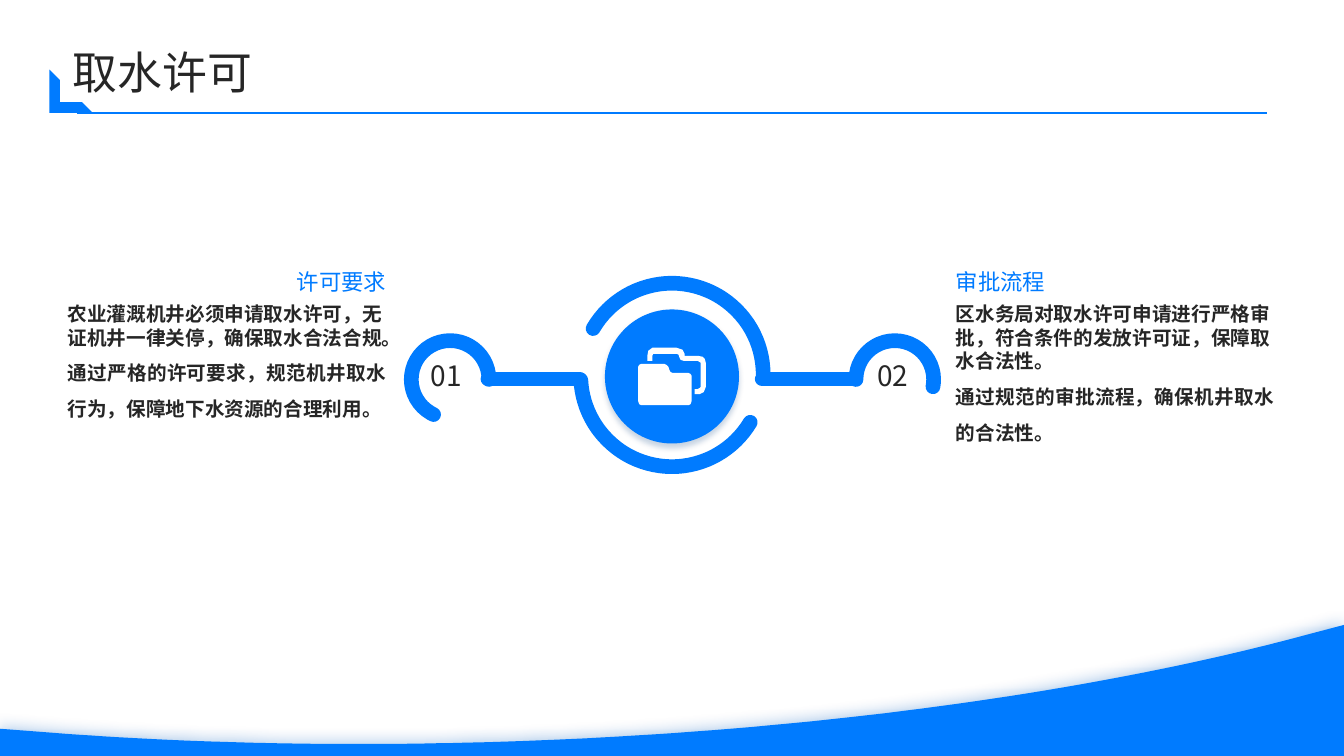
from lxml.etree import SubElement
from pptx import Presentation
from pptx.dml.color import RGBColor
from pptx.enum.shapes import MSO_CONNECTOR as Link, MSO_SHAPE as Kind
from pptx.enum.text import MSO_ANCHOR as Anchor, PP_ALIGN as Align
from pptx.oxml.ns import qn
from pptx.util import Inches, Pt

BLUE, INK, WHITE = "007BFF", "262626", "FFFFFF"


def color(value):
    return RGBColor.from_string(value)


def bezier(start, first, second, end, steps=40):
    """Points along a cubic curve, without its start."""
    points = []
    for step in range(1, steps + 1):
        t = step / steps
        weights = ((1 - t) ** 3, 3 * t * (1 - t) ** 2, 3 * t * t * (1 - t), t ** 3)
        corners = (start, first, second, end)
        points.append(tuple(sum(w * c[axis] for w, c in zip(weights, corners))
                            for axis in (0, 1)))
    return points


class Page:
    font = "Noto Sans CJK SC"
    stroke = 10.5

    def __init__(self, deck):
        self.shapes = deck.slides.add_slide(deck.slide_layouts[6]).shapes

    def outline(self, item, width, cap="rnd"):
        item.line.color.rgb = color(BLUE)
        item.line.width = Pt(width)
        item.element.spPr.find(qn("a:ln")).set("cap", cap)

    def paint(self, shape, fill, shadow=None):
        shape.fill.solid()
        shape.fill.fore_color.rgb = color(fill)
        shape.line.fill.background()
        shape.shadow.inherit = False
        if shadow:
            tint, alpha, blur, distance, angle = shadow
            effects = shape.element.spPr.find(qn("a:effectLst"))
            outer = SubElement(effects, qn("a:outerShdw"), blurRad=str(Pt(blur)),
                               dist=str(Pt(distance)), dir=str(angle * 60000),
                               algn="ctr", rotWithShape="0")
            paint = SubElement(outer, qn("a:srgbClr"), val=tint)
            SubElement(paint, qn("a:alpha"), val=str(alpha * 1000))

    def preset(self, kind, left, top, size, fill, shadow=None):
        shape = self.shapes.add_shape(kind, *map(Inches, (left, top, size, size)))
        self.paint(shape, fill, shadow)
        return shape

    def arc(self, left, top, size, start, end):
        """Clockwise arc between two angles in degrees."""
        shape = self.shapes.add_shape(Kind.ARC, *map(Inches, (left, top, size, size)))
        for index, angle in enumerate((start, end)):
            shape.adjustments[index] = angle * 0.6
        shape.fill.background()
        self.outline(shape, self.stroke)
        shape.shadow.inherit = False

    def line(self, left, right, y, width, cap="rnd"):
        link = self.shapes.add_connector(Link.STRAIGHT, *map(Inches, (left, y, right, y)))
        self.outline(link, width, cap)
        SubElement(link.element.spPr, qn("a:effectLst"))

    def outline_shape(self, points, fill, shadow=None):
        scaled = [(round(x * 1000), round(y * 1000)) for x, y in points]
        builder = self.shapes.build_freeform(*scaled[0], scale=Inches(1) / 1000)
        builder.add_line_segments(scaled[1:], close=True)
        self.paint(builder.convert_to_shape(), fill, shadow)

    def text(self, place, paragraphs, size, ink=INK, bold=False, anchor=Anchor.TOP):
        """Each paragraph is its wording and a dict of paragraph formats."""
        frame = self.shapes.add_textbox(*map(Inches, place)).text_frame
        settings = {"word_wrap": True, "vertical_anchor": anchor}
        settings.update({f"margin_{side}": 0 for side in ("left", "right", "top", "bottom")})
        for name, value in settings.items():
            setattr(frame, name, value)
        for index, (words, formats) in enumerate(paragraphs):
            para = frame.add_paragraph() if index else frame.paragraphs[0]
            for name, value in formats.items():
                setattr(para, name, value)
            span = para.add_run()
            span.text = words
            for name, value in {"size": Pt(size), "bold": bold, "name": self.font}.items():
                setattr(span.font, name, value)
            span.font.color.rgb = color(ink)
            SubElement(span.font._element, qn("a:ea"), typeface=self.font)


def draw_ring(page):
    page.arc(5.76, 2.81, 1.81, 210.2, 359.9)
    page.arc(8.49, 3.38, 0.77, 180, 10.8)
    page.line(7.56, 8.47, 3.76, page.stroke)
    page.arc(4.08, 3.38, 0.77, 115.2, 0)
    page.line(4.84, 5.75, 3.76, page.stroke)
    page.arc(5.76, 2.82, 1.81, 30.9, 177.06)
    page.preset(Kind.OVAL, 6, 3.07, 1.33, BLUE, ("003D80", 22, 4, 3, 90))


def draw_folders(page):
    front = [(6.86, 3.73), (6.85, 3.71), (6.83, 3.7), (6.67, 3.7), (6.65, 3.69),
             (6.64, 3.67), (6.63, 3.64), (6.61, 3.62), (6.59, 3.61), (6.36, 3.61),
             (6.34, 3.62), (6.33, 3.64), (6.33, 3.98), (6.34, 4.01), (6.36, 4.02),
             (6.83, 4.02), (6.85, 4.01), (6.86, 3.98)]
    back = [(7, 3.6), (6.99, 3.56), (6.97, 3.54), (6.92, 3.53), (6.79, 3.53),
            (6.79, 3.51), (6.77, 3.47), (6.71, 3.45), (6.49, 3.45), (6.47, 3.45),
            (6.43, 3.48), (6.42, 3.53), (6.42, 3.58), (6.47, 3.58), (6.47, 3.53),
            (6.48, 3.51), (6.5, 3.51), (6.71, 3.51), (6.73, 3.52), (6.74, 3.55),
            (6.75, 3.57), (6.78, 3.58), (6.92, 3.58), (6.95, 3.6), (6.95, 3.84),
            (6.94, 3.85), (6.92, 3.86), (6.89, 3.86), (6.89, 3.91), (6.92, 3.91),
            (6.94, 3.91), (6.98, 3.89), (7, 3.84)]
    for folder in (front, back):
        page.outline_shape(folder, WHITE)


def draw_step(page, number, number_left, left, align, heading, rule, result):
    page.text((number_left, 3.21, 0.64, 0.68), [(number, {})], 20, anchor=Anchor.BOTTOM)
    page.text((left, 2.02, 3.16, 0.91),
              [(heading, {"alignment": align, "line_spacing": 1.3})],
              16, BLUE, anchor=Anchor.BOTTOM)
    page.text((left, 2.99, 3.16, 3.41),
              [(rule, {"alignment": Align.LEFT, "line_spacing": Pt(17)}),
               (result, {"alignment": Align.JUSTIFY, "line_spacing": Pt(25.6)})],
              14, bold=True)


def draw_wave(page):
    edge = [(13.33, 6.2), (13.33, 7.5), (0, 7.5), (0, 7.23), (0.52, 7.27)]
    edge += bezier(edge[-1], (2.22, 7.4), (4.12, 7.42), (6.09, 7.31))
    edge += bezier(edge[-1], (8.76, 7.16), (11.15, 6.79), (12.99, 6.29))
    page.outline_shape(edge, BLUE, ("005CBF", 40, 12, 2, 225))


def draw_title(page):
    page.text((0.72, 0.43, 11.88, 0.51), [("取水许可", {"line_spacing": 1.1})],
              32, anchor=Anchor.MIDDLE)
    corner = page.preset(Kind.HALF_FRAME, 0.49, 0.69, 0.43, BLUE)
    corner.rotation = 270
    corner.adjustments[0], corner.adjustments[1] = 0.24, 0.25
    page.line(0.76, 12.57, 1.12, 1, "flat")


def main():
    deck = Presentation()
    deck.slide_width, deck.slide_height = Inches(13.33), Inches(7.5)
    page = Page(deck)

    # Central ring with its two branches
    draw_ring(page)
    draw_folders(page)

    # Text on both sides
    draw_step(page, "02", 8.7, 9.48, Align.LEFT, "审批流程",
              "区水务局对取水许可申请进行严格审批，符合条件的发放许可证，保障取水合法性。",
              "通过规范的审批流程，确保机井取水的合法性。")
    draw_step(page, "01", 4.27, 0.67, Align.RIGHT, "许可要求",
              "农业灌溉机井必须申请取水许可，无证机井一律关停，确保取水合法合规。",
              "通过严格的许可要求，规范机井取水行为，保障地下水资源的合理利用。")

    # Footer wave and title
    draw_wave(page)
    draw_title(page)
    deck.save("out.pptx")


if __name__ == "__main__":
    main()
